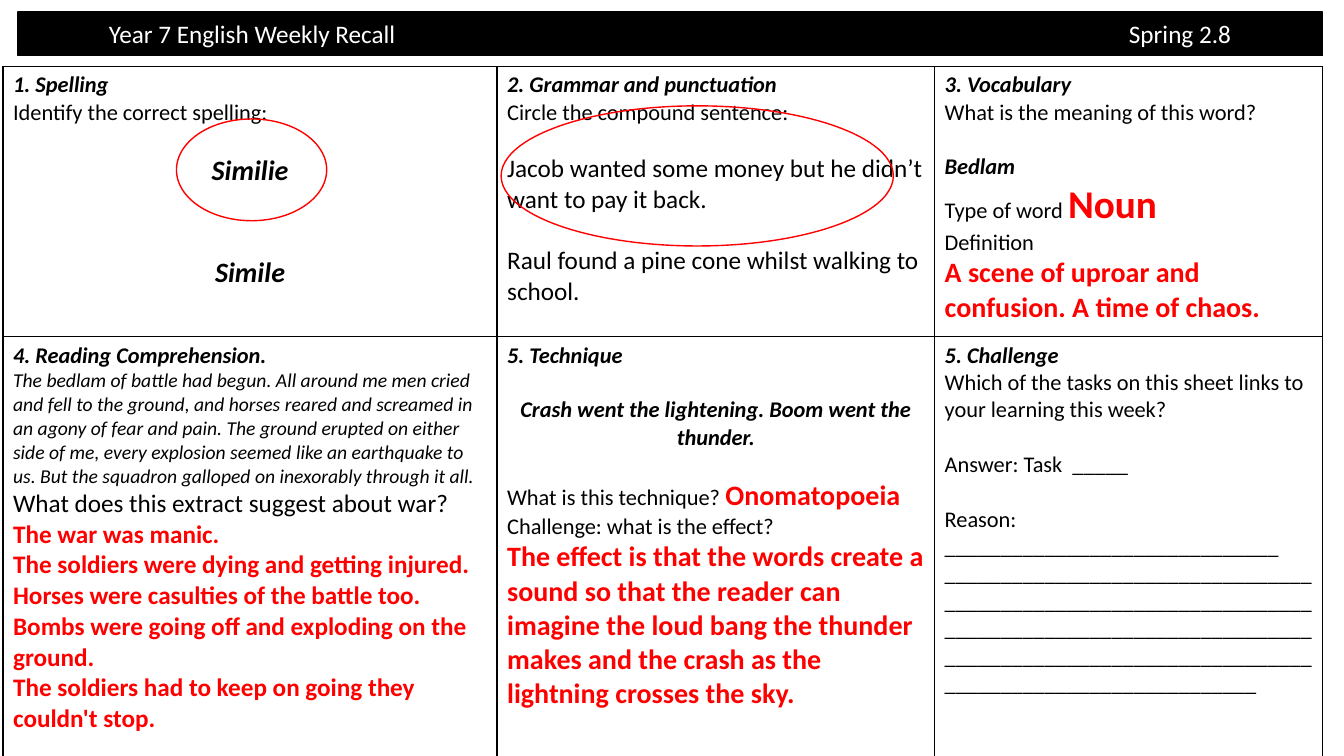
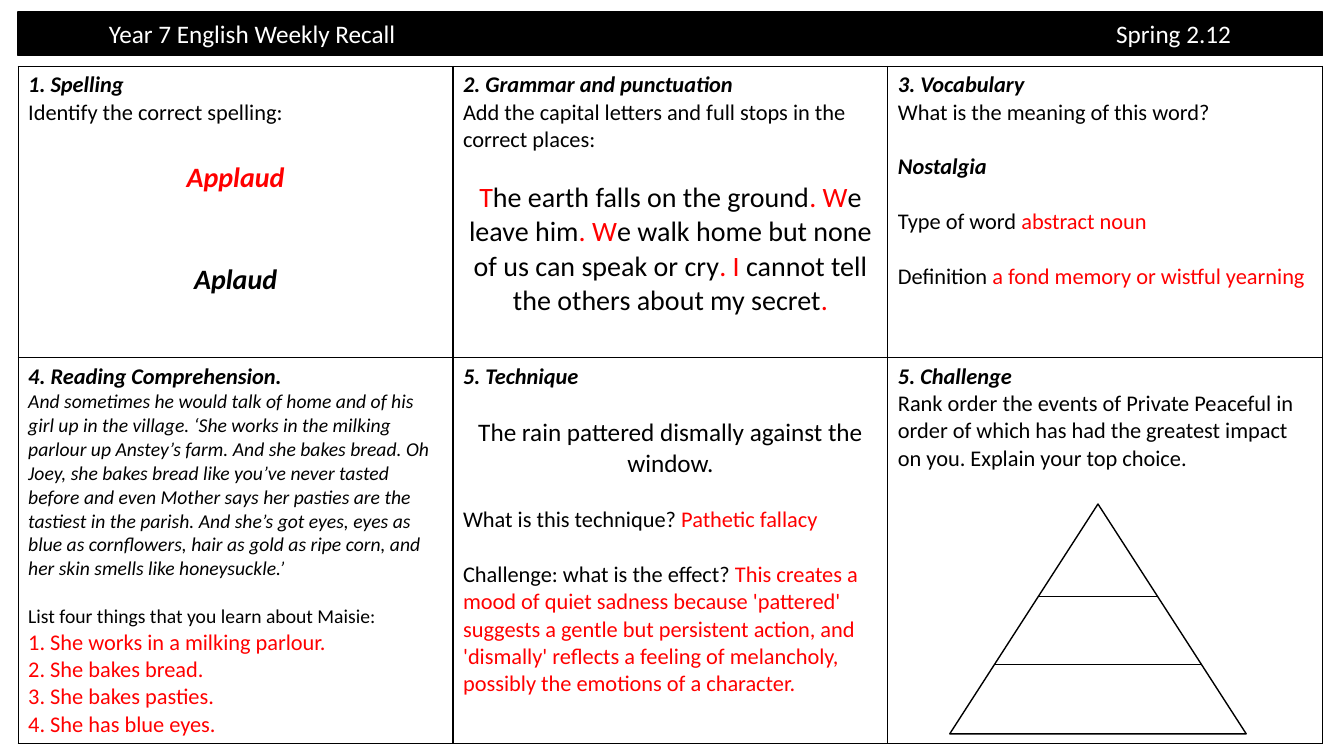
from lxml import etree
from pptx import Presentation
from pptx import util as u
from pptx.dml.color import RGBColor
from pptx.enum import shapes, text
from pptx.oxml import ns

# Shared look
BLACK = RGBColor(0, 0, 0)
WHITE = RGBColor(255, 255, 255)
RED = RGBColor(255, 0, 0)
FONT = "Calibri"
LINE_HEIGHT = 1.22
LEFT, CENTRE = text.PP_ALIGN.LEFT, text.PP_ALIGN.CENTER
WIDTH, HEIGHT = 13.33, 7.5
MARGIN, BAND_TOP, BAND_HEIGHT, GRID_TOP = 0.18, 0.12, 0.43, 0.66
BAND_WIDTH = 12.94
BAND_INSET, WEEK_TAB = 0.9, 11.13

# Each sheet: week, grid left, column widths, row heights, six tasks.
# A task is a heading and paragraphs: (gap above in points of text, alignment, *runs).
# A run is (text, size, style letters, colour).
SHEETS = [
    ("Spring 2.8", 0.03, [4.9, 4.34, 3.85], [2.68, 4.2], [
        ("1. Spelling", [
            (0, LEFT, ("Identify the correct spelling:", 16, "", BLACK)),
            (16, CENTRE, ("Similie", 20, "bi", BLACK)),
            (40, CENTRE, ("Simile", 20, "bi", BLACK))]),
        ("2. Grammar and punctuation", [
            (0, LEFT, ("Circle the compound sentence:", 16, "", BLACK)),
            (16, LEFT, ("Jacob wanted some money but he didn’t want to pay it back.", 18, "", BLACK)),
            (18, LEFT, ("Raul found a pine cone whilst walking to school.", 18, "", BLACK))]),
        ("3. Vocabulary", [
            (0, LEFT, ("What is the meaning of this word?", 16, "", BLACK)),
            (16, LEFT, ("Bedlam", 16, "bi", BLACK)),
            (0, LEFT, ("Type of word ", 16, "", BLACK), ("Noun", 28, "b", RED)),
            (0, LEFT, ("Definition", 16, "", BLACK)),
            (0, LEFT, ("A scene of uproar and confusion. A time of chaos.", 20, "b", RED))]),
        ("4. Reading Comprehension.", [
            (0, LEFT, ("The bedlam of battle had begun. All around me men cried and fell to the "
                       "ground, and horses reared and screamed in an agony of fear and pain. The "
                       "ground erupted on either side of me, every explosion seemed like an "
                       "earthquake to us. But the squadron galloped on inexorably through it all.",
                       14, "i", BLACK)),
            (0, LEFT, ("What does this extract suggest about war?", 18, "", BLACK)),
            *[(0, LEFT, (answer, 18, "b", RED)) for answer in (
                "The war was manic.",
                "The soldiers were dying and getting injured.",
                "Horses were casulties of the battle too.",
                "Bombs were going off and exploding on the ground.",
                "The soldiers had to keep on going they couldn't stop.")]]),
        ("5. Technique", [
            (16, CENTRE, ("Crash went the lightening. Boom went the thunder.", 16, "bi", BLACK)),
            (16, LEFT, ("What is this technique? ", 16, "", BLACK), ("Onomatopoeia", 20, "b", RED)),
            (0, LEFT, ("Challenge: what is the effect?", 16, "", BLACK)),
            (0, LEFT, ("The effect is that the words create a sound so that the reader can imagine "
                       "the loud bang the thunder makes and the crash as the lightning crosses the "
                       "sky.", 20, "b", RED))]),
        ("5. Challenge", [
            (0, LEFT, ("Which of the tasks on this sheet links to your learning this week?", 16, "", BLACK)),
            (16, LEFT, ("Answer: Task  _____", 16, "", BLACK)),
            (16, LEFT, ("Reason: " + "_" * 30 + " " + "_" * 160, 16, "", BLACK))]),
    ]),
    ("Spring 2.12", MARGIN, [BAND_WIDTH / 3] * 3, [2.89, 3.83], [
        ("1. Spelling", [
            (0, LEFT, ("Identify the correct spelling:", 16, "", BLACK)),
            (20, CENTRE, ("Applaud", 20, "bi", RED)),
            (40, CENTRE, ("Aplaud", 20, "bi", BLACK))]),
        ("2. Grammar and punctuation", [
            (0, LEFT, ("Add the capital letters and full stops in the correct places:", 16, "", BLACK)),
            (16, CENTRE,
             ("T", 20, "", RED), ("he earth falls on the ground", 20, "", BLACK),
             (". W", 20, "", RED), ("e leave him", 20, "", BLACK),
             (". W", 20, "", RED), ("e walk home but none of us can speak or cry", 20, "", BLACK),
             (". I", 20, "", RED), (" cannot tell the others about my secret", 20, "", BLACK),
             (".", 20, "", RED))]),
        ("3. Vocabulary", [
            (0, LEFT, ("What is the meaning of this word?", 16, "", BLACK)),
            (16, LEFT, ("Nostalgia", 16, "bi", BLACK)),
            (16, LEFT, ("Type of word ", 16, "", BLACK), ("abstract noun", 16, "", RED)),
            (16, LEFT, ("Definition ", 16, "", BLACK),
             ("a fond memory or wistful yearning", 16, "", RED))]),
        ("4. Reading Comprehension.", [
            (0, LEFT, ("And sometimes he would talk of home and of his girl up in the village. ‘She "
                       "works in the milking parlour up Anstey’s farm. And she bakes bread. Oh Joey, "
                       "she bakes bread like you’ve never tasted before and even Mother says her "
                       "pasties are the tastiest in the parish. And she’s got eyes, eyes as blue as "
                       "cornflowers, hair as gold as ripe corn, and her skin smells like "
                       "honeysuckle.’", 14, "i", BLACK)),
            (14, LEFT, ("List four things that you learn about Maisie:", 14, "", BLACK)),
            *[(0, LEFT, (answer, 16, "", RED)) for answer in (
                "1. She works in a milking parlour.",
                "2. She bakes bread.",
                "3. She bakes pasties.",
                "4. She has blue eyes.")]]),
        ("5. Technique", [
            (16, CENTRE, ("The rain pattered dismally against the window.", 18, "", BLACK)),
            (16, LEFT, ("What is this technique? ", 16, "", BLACK), ("Pathetic fallacy", 16, "", RED)),
            (16, LEFT, ("Challenge: what is the effect? ", 16, "", BLACK),
             ("This creates a mood of quiet sadness because 'pattered' suggests a gentle but "
              "persistent action, and 'dismally' reflects a feeling of melancholy, possibly the "
              "emotions of a character.", 16, "", RED))]),
        ("5. Challenge", [
            (0, LEFT, ("Rank order the events of Private Peaceful in order of which has had the "
                       "greatest impact on you. Explain your top choice.", 16, "", BLACK))]),
    ]),
]


def add_run(paragraph, words, size, style, colour):
    run = paragraph.add_run()
    run.text = words
    run.font.name = FONT
    run.font.size = u.Pt(size)
    run.font.bold = "b" in style
    run.font.italic = "i" in style
    run.font.color.rgb = colour


def outline(shape, colour, width):
    shape.line.color.rgb = colour
    shape.line.width = u.Pt(width)


prs = Presentation()
prs.slide_width, prs.slide_height = u.Inches(WIDTH), u.Inches(HEIGHT)

for week, grid_left, columns, rows, tasks in SHEETS:
    slide = prs.slides.add_slide(prs.slide_layouts[5])

    # Title band, with the week on a right tab
    band = slide.shapes.title
    band.left, band.top = u.Inches(MARGIN), u.Inches(BAND_TOP)
    band.width, band.height = u.Inches(BAND_WIDTH), u.Inches(BAND_HEIGHT)
    band.fill.solid()
    band.fill.fore_color.rgb = BLACK
    outline(band, BLACK, 1)
    frame = band.text_frame
    frame.auto_size = text.MSO_AUTO_SIZE.NONE
    frame.vertical_anchor = text.MSO_ANCHOR.MIDDLE
    frame.margin_left = u.Inches(BAND_INSET)
    frame.margin_right = 0
    heading = frame.paragraphs[0]
    heading.alignment = LEFT
    tabs = etree.SubElement(heading._p.get_or_add_pPr(), ns.qn("a:tabLst"))
    etree.SubElement(tabs, ns.qn("a:tab"), pos=str(u.Inches(WEEK_TAB)), algn="r")
    add_run(heading, "Year 7 English Weekly Recall\t" + week, 18, "", WHITE)

    # Task grid
    grid = slide.shapes.add_table(
        len(rows), len(columns), u.Inches(grid_left), u.Inches(GRID_TOP),
        u.Inches(sum(columns)), u.Inches(sum(rows))).table
    grid.first_row = grid.horz_banding = False
    for column, width in zip(grid.columns, columns):
        column.width = u.Inches(width)
    for row, height in zip(grid.rows, rows):
        row.height = u.Inches(height)

    for cell, (title, paragraphs) in zip(grid.iter_cells(), tasks):
        cell.fill.background()
        cell_props = cell._tc.get_or_add_tcPr()
        for order, side in enumerate(("lnL", "lnR", "lnT", "lnB")):
            border = etree.Element(ns.qn("a:" + side), w=str(u.Pt(1)))
            fill = etree.SubElement(border, ns.qn("a:solidFill"))
            etree.SubElement(fill, ns.qn("a:srgbClr"), val=str(BLACK))
            cell_props.insert(order, border)
        add_run(cell.text_frame.paragraphs[0], title, 16, "bi", BLACK)
        for gap, alignment, *runs in paragraphs:
            paragraph = cell.text_frame.add_paragraph()
            paragraph.alignment = alignment
            paragraph.space_before = u.Pt(round(gap * LINE_HEIGHT, 1))
            for run in runs:
                add_run(paragraph, *run)

spelling_sheet, ranking_sheet = prs.slides

# Rings round the chosen answers
for left, top, width, height in ((4.97, 1.05, 3.89, 1.39), (1.75, 1.18, 1.49, 1.01)):
    ring = spelling_sheet.shapes.add_shape(
        shapes.MSO_SHAPE.OVAL, *map(u.Inches, (left, top, width, height)))
    ring.shadow.inherit = False
    ring.fill.background()
    outline(ring, RED, 1)

# Ranking pyramid, cut into levels at shares of its height
PEAK, PEAK_TOP, BASE, TALL = 10.89, 5, 2.94, 2.28
pyramid = ranking_sheet.shapes.add_shape(
    shapes.MSO_SHAPE.ISOSCELES_TRIANGLE,
    *map(u.Inches, (PEAK - BASE / 2, PEAK_TOP, BASE, TALL)))
pyramid.shadow.inherit = False
pyramid.fill.solid()
pyramid.fill.fore_color.rgb = WHITE
outline(pyramid, BLACK, 1)
for share in (0.4, 0.7):
    half, y = BASE / 2 * share, PEAK_TOP + TALL * share
    level = ranking_sheet.shapes.add_connector(
        shapes.MSO_CONNECTOR.STRAIGHT, *map(u.Inches, (PEAK - half, y, PEAK + half, y)))
    outline(level, BLACK, 0.5)
    etree.SubElement(level._element.spPr, ns.qn("a:effectLst"))

prs.save("out.pptx")
